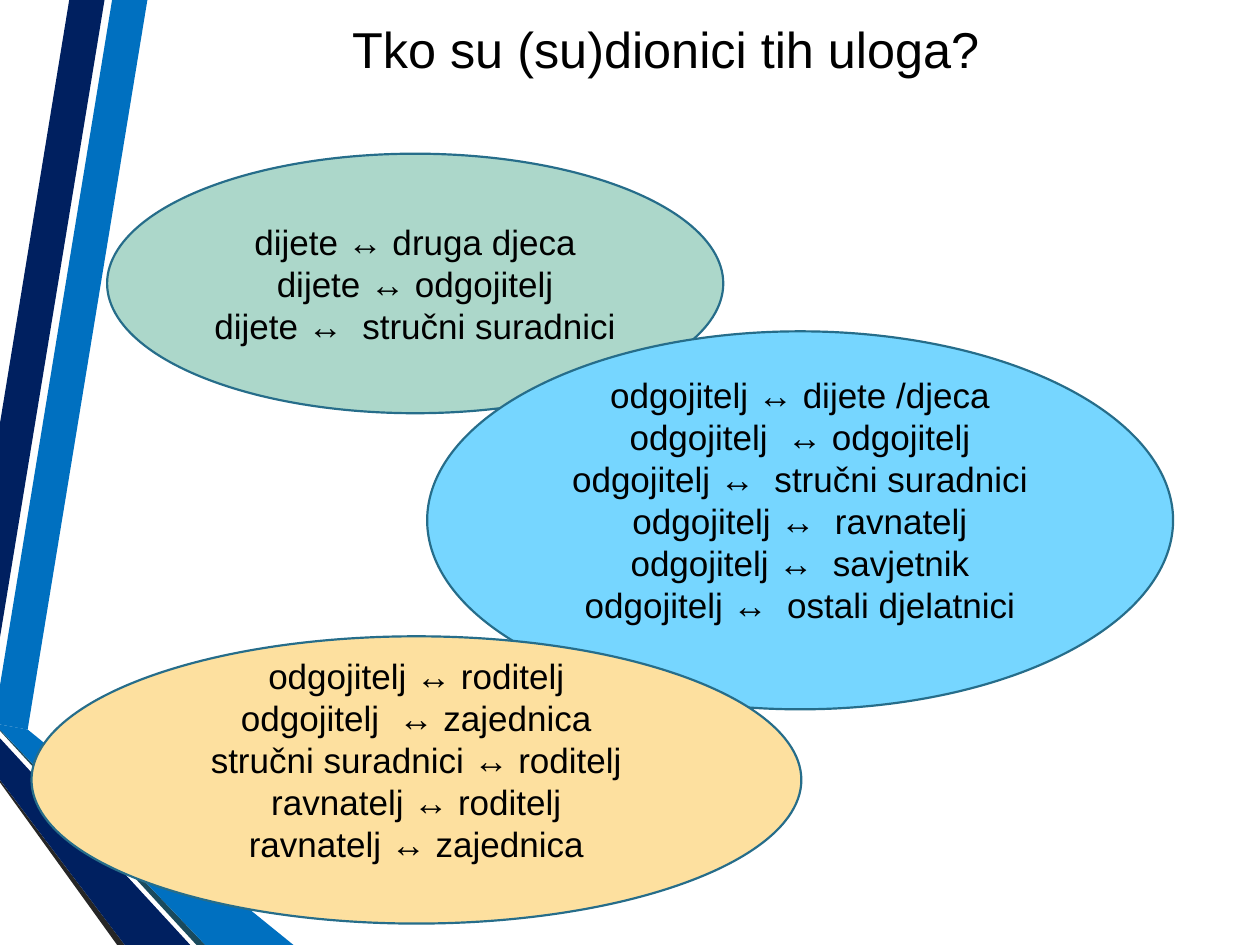
from pptx import Presentation
from pptx.dml.color import RGBColor
from pptx.enum.shapes import MSO_SHAPE
from pptx.enum.text import MSO_ANCHOR, PP_ALIGN
from pptx.util import Inches, Pt

OVAL = MSO_SHAPE.OVAL
MIDDLE = MSO_ANCHOR.MIDDLE
CENTER = PP_ALIGN.CENTER

BLACK = RGBColor(0x00, 0x00, 0x00)
BLUE = RGBColor(0x00, 0x70, 0xC0)
NAVY = RGBColor(0x00, 0x20, 0x60)
GRAY = RGBColor(0x26, 0x26, 0x26)
TEAL = RGBColor(0x1A, 0x4A, 0x5D)
EDGE = RGBColor(0x26, 0x6D, 0x8A)
GREEN = RGBColor(0xAC, 0xD7, 0xCA)
SKY = RGBColor(0x76, 0xD6, 0xFF)
SAND = RGBColor(0xFD, 0xE0, 0x9F)

TITLE = "Tko su (su)dionici tih uloga?"

# Corner points of each ribbon in inches, back to front
RIBBONS = [
    (BLUE, [(0, 5.44), (0, 5.75), (0.22, 5.79), (1.17, 0), (0.89, 0)]),
    (NAVY, [(0.83, 0), (0.55, 0), (0, 3.36), (0, 5.06)]),
    (GRAY, [(0, 6.19), (0, 6.21), (0.93, 7.5), (0.99, 7.5)]),
    (TEAL, [(0, 5.79), (0, 5.8), (1.56, 7.5), (1.63, 7.5)]),
    (BLUE, [(0, 5.79), (1.63, 7.5), (2.33, 7.5), (0.22, 5.79), (0, 5.75)]),
    (NAVY, [(0, 6.19), (0.99, 7.5), (1.51, 7.5), (0, 5.86)]),
]

# Fill, box (left, top, width, height), bottom inset, lines
GROUPS = [
    (GREEN, (0.85, 1.22, 4.89, 2.06), 0.05, [
        "dijete ↔ druga djeca",
        "dijete ↔ odgojitelj",
        "dijete ↔  stručni suradnici",
    ]),
    (SKY, (3.39, 2.63, 5.92, 3), 0.38, [
        "odgojitelj ↔ dijete /djeca",
        "odgojitelj  ↔ odgojitelj",
        "odgojitelj ↔  stručni suradnici",
        "odgojitelj ↔  ravnatelj",
        "odgojitelj ↔  savjetnik",
        "odgojitelj ↔  ostali djelatnici",
    ]),
    (SAND, (0.25, 5.05, 6.11, 2.28), 0.38, [
        "odgojitelj ↔ roditelj",
        "odgojitelj  ↔ zajednica",
        "stručni suradnici ↔ roditelj",
        "ravnatelj ↔ roditelj",
        "ravnatelj ↔ zajednica",
    ]),
]


def write(shape, lines, size=20, top=0.05, bottom=0.05):
    frame = shape.text_frame
    frame.word_wrap = True
    frame.vertical_anchor = MIDDLE
    frame.margin_top = Inches(top)
    frame.margin_bottom = Inches(bottom)
    for i, line in enumerate(lines):
        para = frame.add_paragraph() if i else frame.paragraphs[0]
        para.alignment = CENTER
        run = para.add_run()
        run.text = line
        run.font.name = "Arial"
        run.font.size = Pt(size)
        run.font.color.rgb = BLACK


def paint(shape, fill, edge=None):
    shape.shadow.inherit = False
    shape.fill.solid()
    shape.fill.fore_color.rgb = fill
    if edge is None:
        shape.line.fill.background()
    else:
        shape.line.color.rgb = edge
        shape.line.width = Pt(1.25)


def main():
    deck = Presentation()
    deck.slide_width, deck.slide_height = Inches(10), Inches(7.5)
    shapes = deck.slides.add_slide(deck.slide_layouts[6]).shapes

    for fill, points in RIBBONS:
        start, *rest = [(Inches(x), Inches(y)) for x, y in points]
        path = shapes.build_freeform(*start)
        path.add_line_segments(rest, close=True)
        paint(path.convert_to_shape(), fill)

    title = shapes.add_textbox(*map(Inches, (1.07, 0.22, 8.43, 0.79)))
    write(title, [TITLE], size=28.8, top=0, bottom=0.46)

    for fill, box, bottom, lines in GROUPS:
        oval = shapes.add_shape(OVAL, *map(Inches, box))
        paint(oval, fill, EDGE)
        write(oval, lines, bottom=bottom)

    deck.save("out.pptx")


if __name__ == "__main__":
    main()
